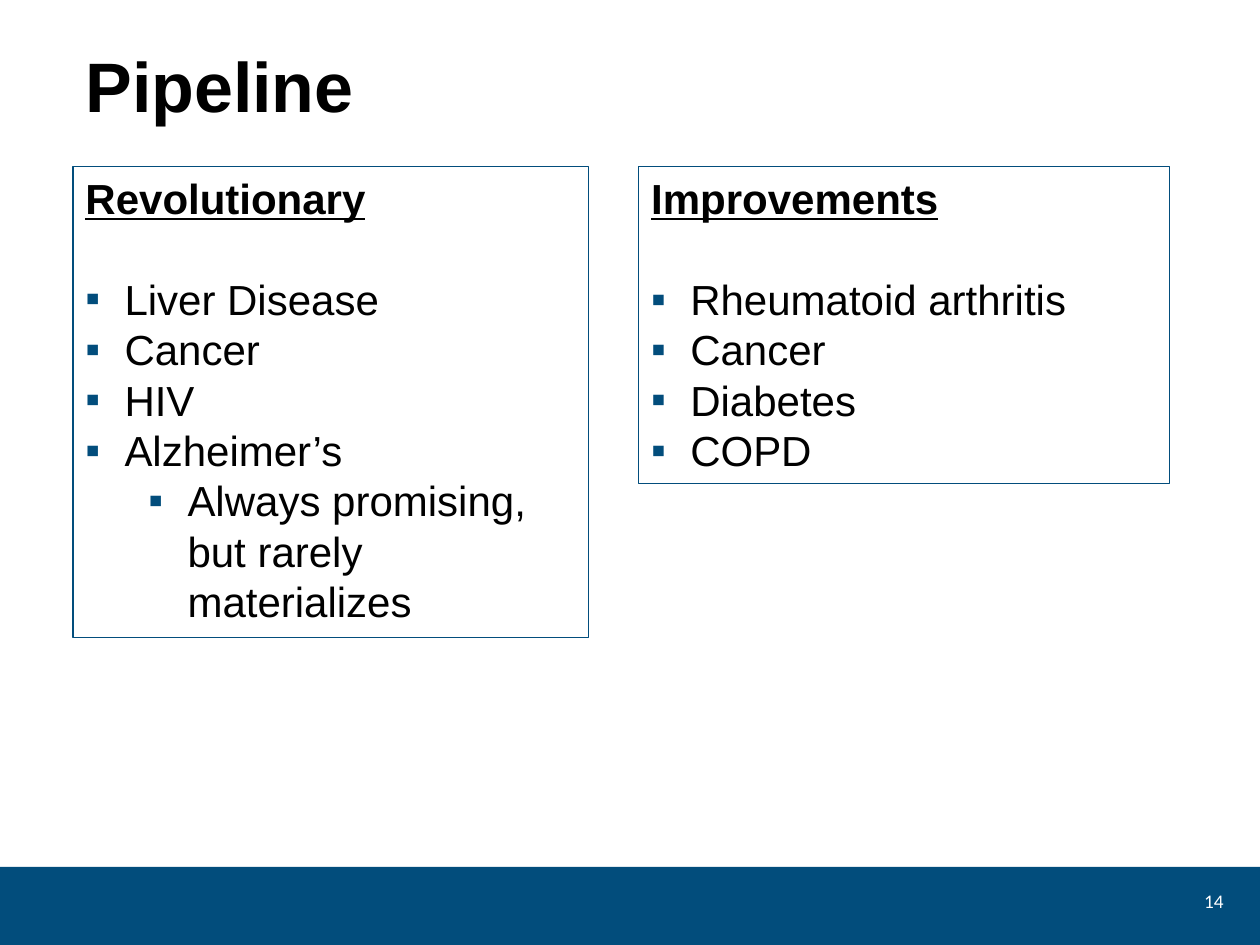
from lxml.etree import SubElement
from pptx import Presentation
from pptx.dml.color import RGBColor
from pptx.enum.shapes import MSO_SHAPE
from pptx.enum.text import MSO_ANCHOR, PP_ALIGN
from pptx.oxml.ns import qn
from pptx.util import Inches, Pt

COLORS = {"blue": "024D7C", "black": "000000", "white": "FFFFFF"}
LINE_HEIGHT = Pt(28.8)
BULLET_HANG = 0.31
COLUMNS = [
    ((0.58, 1.32, 4.09, 3.74), "Revolutionary",
     [("Liver Disease", 0), ("Cancer", 0), ("HIV", 0), ("Alzheimer’s", 0),
      ("Always promising, but rarely materializes", 1)]),
    ((5.07, 1.32, 4.21, 2.52), "Improvements",
     [("Rheumatoid arthritis", 0), ("Cancer", 0), ("Diabetes", 0), ("COPD", 0)]),
]


def color(name):
    return RGBColor.from_string(COLORS[name])


def add_span(para, text, size, tint="black", name="Arial", bold=False, underline=False):
    span = para.add_run()
    span.text = text
    font = span.font
    font.size, font.name = Pt(size), name
    font.bold, font.underline = bold, underline
    font.color.rgb = color(tint)


def add_rectangle(page, area):
    box = page.shapes.add_shape(MSO_SHAPE.RECTANGLE, *map(Inches, area))
    box.shadow.inherit = False
    return box


def set_bullet(para, level):
    para.level = level
    properties = para._p.get_or_add_pPr()
    properties.set("marL", str(Inches(BULLET_HANG + 0.5 * level)))
    properties.set("indent", str(-Inches(BULLET_HANG)))
    tint = SubElement(properties, qn("a:buClr"))
    SubElement(tint, qn("a:srgbClr"), val=COLORS["blue"])
    SubElement(properties, qn("a:buFont"), typeface="Arial")
    SubElement(properties, qn("a:buChar"), char="▪")


def add_title(page, area, text):
    box = page.shapes.add_textbox(*map(Inches, area))
    box.text_frame.word_wrap = True
    para = box.text_frame.paragraphs[0]
    para.line_spacing = 0.9
    add_span(para, text, 40, bold=True)


def add_column(page, area, heading, items):
    box = add_rectangle(page, area)
    box.fill.background()
    box.line.color.rgb = color("blue")
    box.line.width = Pt(0.75)
    frame = box.text_frame
    frame.word_wrap = True
    frame.vertical_anchor = MSO_ANCHOR.TOP
    para = frame.paragraphs[0]
    para.alignment = PP_ALIGN.LEFT
    para.line_spacing = para.space_after = LINE_HEIGHT
    add_span(para, heading, 24, bold=True, underline=True)
    for text, level in items:
        para = frame.add_paragraph()
        para.alignment = PP_ALIGN.LEFT
        para.line_spacing = LINE_HEIGHT
        set_bullet(para, level)
        add_span(para, text, 24)


def add_footer(page, area, number):
    band = add_rectangle(page, area)
    band.fill.solid()
    band.fill.fore_color.rgb = color("blue")
    band.line.fill.background()
    left, top, width, _ = area
    box = page.shapes.add_textbox(Inches(left + width - 0.72), Inches(top + 0.16),
                                  Inches(0.53), Inches(0.22))
    frame = box.text_frame
    frame.word_wrap = True
    frame.vertical_anchor = MSO_ANCHOR.MIDDLE
    para = frame.paragraphs[0]
    para.alignment = PP_ALIGN.RIGHT
    add_span(para, number, 11, "white", "Calibri")


def main():
    deck = Presentation()
    deck.slide_width, deck.slide_height = Inches(10), Inches(7.5)
    page = deck.slides.add_slide(deck.slide_layouts[6])
    add_footer(page, (0, 6.88, 10, 0.65), "14")
    add_title(page, (0.58, 0.36, 8.73, 0.81), "Pipeline")
    for area, heading, items in COLUMNS:
        add_column(page, area, heading, items)
    deck.save("out.pptx")


if __name__ == "__main__":
    main()
